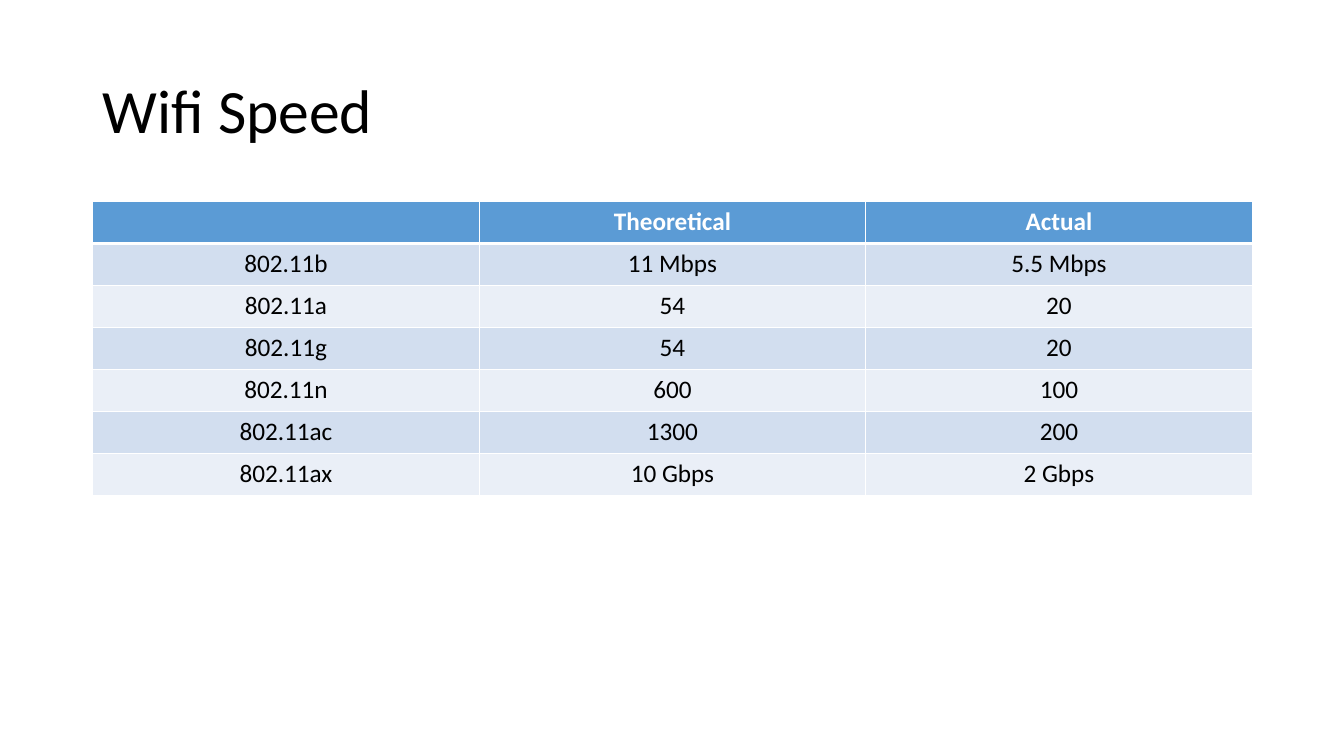
from pptx import Presentation
from pptx.dml.color import RGBColor as RGB
from pptx.enum.text import MSO_ANCHOR as Anchor, PP_ALIGN as Align
from pptx.oxml import parse_xml
from pptx.oxml.ns import nsdecls
from pptx.util import Inches, Pt

BLACK = RGB(0x00, 0x00, 0x00)
WHITE = RGB(0xFF, 0xFF, 0xFF)
BLUE = RGB(0x5B, 0x9B, 0xD5)
BANDS = RGB(0xD2, 0xDE, 0xEF), RGB(0xEA, 0xEF, 0xF7)

SPEEDS = [
    ("", "Theoretical", "Actual"),
    ("802.11b", "11 Mbps", "5.5 Mbps"),
    ("802.11a", "54", "20"),
    ("802.11g", "54", "20"),
    ("802.11n", "600", "100"),
    ("802.11ac", "1300", "200"),
    ("802.11ax", "10 Gbps", "2 Gbps"),
]


class Page:
    def __init__(self, deck, font):
        self.slide = deck.slides.add_slide(deck.slide_layouts[6])
        self.font = font

    def label(self, para, text, color, **style):
        para.text = text
        for name, value in {"name": self.font, **style}.items():
            setattr(para.font, name, value)
        para.font.color.rgb = color

    def title(self, text, *box):
        frame = self.slide.shapes.add_textbox(*map(Inches, box)).text_frame
        frame.word_wrap = True
        frame.vertical_anchor = Anchor.MIDDLE
        para = frame.paragraphs[0]
        para.line_spacing = 0.9
        self.label(para, text, BLACK, size=Pt(44))

    def border(self, cell, **widths):
        """Draw white cell edges; widths in points, keyed L, R, T, B in that order."""
        props = cell._tc.get_or_add_tcPr()
        for side, width in widths.items():
            props.append(parse_xml(
                f'<a:ln{side} {nsdecls("a")} w="{Pt(width)}"><a:solidFill>'
                f'<a:srgbClr val="{WHITE}"/></a:solidFill></a:ln{side}>'))

    def table(self, rows, left, top, width, height):
        grid = self.slide.shapes.add_table(
            len(rows), len(rows[0]),
            *map(Inches, (left, top, width, height))).table
        for r, texts in enumerate(rows):
            head = r == 0
            for c, text in enumerate(texts):
                cell = grid.cell(r, c)
                self.border(cell, L=1, R=1, T=3 if r == 1 else 1,
                            B=3 if head else 1)
                cell.fill.solid()
                cell.fill.fore_color.rgb = BLUE if head else BANDS[(r - 1) % 2]
                para = cell.text_frame.paragraphs[0]
                para.alignment = Align.CENTER
                self.label(para, text, WHITE if head else BLACK,
                           size=Pt(18), bold=head)


def main():
    deck = Presentation()
    deck.slide_width, deck.slide_height = Inches(13.33), Inches(7.5)
    page = Page(deck, "Calibri")
    page.title("Wifi Speed", 0.92, 0.4, 11.5, 1.45)
    page.table(SPEEDS, 0.92, 2, 11.5, 2.92)
    deck.save("out.pptx")


if __name__ == "__main__":
    main()
